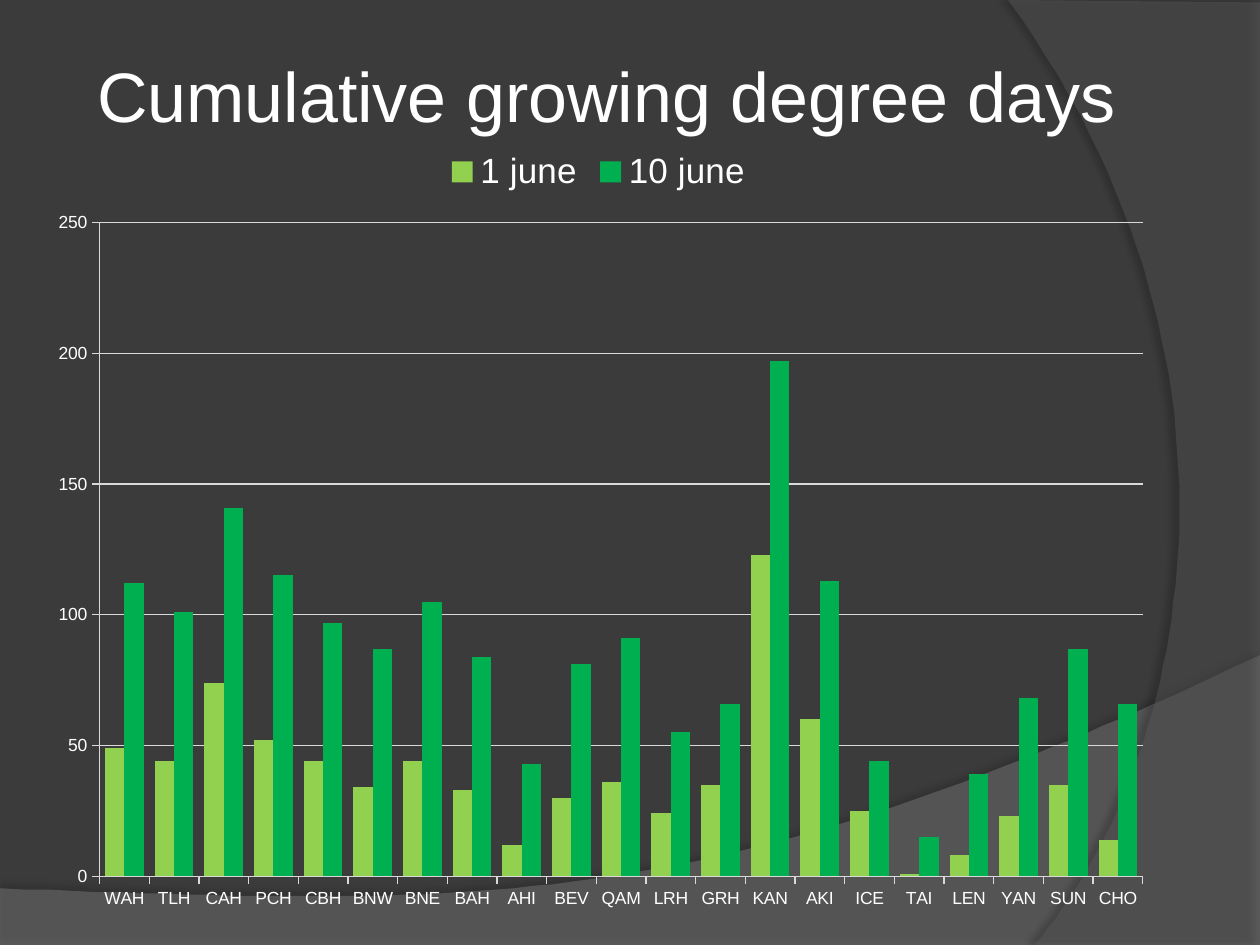
from typing import NamedTuple

from lxml.etree import SubElement
from pptx import Presentation
from pptx.chart.data import CategoryChartData as ChartData
from pptx.dml.color import RGBColor
from pptx.enum.chart import XL_CHART_TYPE as Kind, XL_LEGEND_POSITION as Side, XL_TICK_MARK as Tick
from pptx.enum.text import MSO_ANCHOR as Anchor, PP_ALIGN as Align
from pptx.oxml.ns import qn
from pptx.util import Pt

PX = 9144
FONT = "Arial"
WHITE = RGBColor(0xFF, 0xFF, 0xFF)
BLACK = RGBColor(0, 0, 0)
BACK = RGBColor(0x3B, 0x3B, 0x3B)
SWELL = RGBColor(0x7F, 0x7F, 0x7F)
ARC = RGBColor(0x5E, 0x5E, 0x5E)
LINE = RGBColor(0xD9, 0xD9, 0xD9)
LIME = RGBColor(0x92, 0xD0, 0x50)
GREEN = RGBColor(0x00, 0xB0, 0x50)
STEPS = 60

Point = tuple[float, float]


class Wave(NamedTuple):
    curve: tuple[Point, Point, Point, Point]
    rest: list[Point]
    color: RGBColor
    alpha: int
    shade: int
    dist: float
    angle: int


class Series(NamedTuple):
    name: str
    color: RGBColor
    vals: list[int]


WAVES = [
    Wave(((1000, 520), (559, 729), (391, 719), (0, 705)),
         [(0, 751), (1000, 751)], SWELL, 45, 35, 3.5, 270),
    Wave(((821, 750), (935, 619), (1018, 300), (800, 0)),
         [(1000, 2), (1000, 750)], ARC, 40, 45, 4, 180),
]
SITES = ("WAH TLH CAH PCH CBH BNW BNE BAH AHI BEV QAM "
         "LRH GRH KAN AKI ICE TAI LEN YAN SUN CHO").split()
SERIES = [
    Series("1 june", LIME, [49, 44, 74, 52, 44, 34, 44, 33, 12, 30, 36,
                            24, 35, 123, 60, 25, 1, 8, 23, 35, 14]),
    Series("10 june", GREEN, [112, 101, 141, 115, 97, 87, 105, 84, 43, 81, 91,
                              55, 66, 197, 113, 44, 15, 39, 68, 87, 66]),
]


def apply(obj, form: dict) -> None:
    for key, val in form.items():
        setattr(obj, key, val)


def box(x: int, y: int, w: int, h: int) -> dict:
    return {"left": x * PX, "top": y * PX, "width": w * PX, "height": h * PX}


def style(font, size: int) -> None:
    apply(font, {"name": FONT, "size": Pt(size), "bold": False})
    font.color.rgb = WHITE


def stroke(line) -> None:
    line.width = Pt(0.75)
    line.color.rgb = LINE


def bend(curve: tuple[Point, Point, Point, Point], t: float) -> Point:
    u = 1 - t
    parts = (u ** 3, 3 * u * u * t, 3 * u * t * t, t ** 3)
    return tuple(sum(k * p[i] for k, p in zip(parts, curve)) for i in (0, 1))


def fade(node, alpha: int) -> None:
    SubElement(node, qn("a:alpha"), val=str(alpha * 1000))


def draw_wave(slide, wave: Wave) -> None:
    start, *dots = [bend(wave.curve, n / STEPS) for n in range(STEPS + 1)]
    path = slide.shapes.build_freeform(*start, scale=PX)
    path.add_line_segments(dots + wave.rest)
    shape = path.convert_to_shape()
    shape.line.fill.background()
    shape.fill.solid()
    shape.fill.fore_color.rgb = wave.color
    props = shape.element.spPr
    fade(props.find(qn("a:solidFill"))[0], wave.alpha)
    glow = SubElement(SubElement(props, qn("a:effectLst")), qn("a:outerShdw"),
                      blurRad=str(Pt(4)), dist=str(Pt(wave.dist)),
                      dir=str(wave.angle * 60000), rotWithShape="0")
    fade(SubElement(glow, qn("a:srgbClr"), val=str(BLACK)), wave.shade)


def draw_title(slide, text: str) -> None:
    title = slide.shapes.title
    apply(title, box(67, 33, 867, 77))
    frame = title.text_frame
    apply(frame, {"text": text, "word_wrap": True, "vertical_anchor": Anchor.BOTTOM,
                  "margin_bottom": 2 * PX})
    para = frame.paragraphs[0]
    para.alignment = Align.LEFT
    style(para.runs[0].font, 40)
    slide.shapes.element.append(title.element)


def place_plot(chart) -> None:
    area = chart.element.find(".//" + qn("c:plotArea"))
    for old in area.findall(qn("c:layout")):
        area.remove(old)
    layout = SubElement(area, qn("c:layout"))
    area.insert(0, layout)
    manual = SubElement(layout, qn("c:manualLayout"))
    spots = {"layoutTarget": "inner", "xMode": "edge", "yMode": "edge",
             "x": "0.06", "y": "0.11", "w": "0.92", "h": "0.83"}
    for key, val in spots.items():
        SubElement(manual, qn("c:" + key), val=val)


def draw_chart(slide) -> None:
    data = ChartData()
    data.categories = SITES
    for item in SERIES:
        data.add_series(item.name, item.vals)
    spot = box(25, 108, 900, 625)
    chart = slide.shapes.add_chart(Kind.COLUMN_CLUSTERED, *spot.values(), data).chart
    apply(chart, {"has_title": False, "has_legend": True})
    style(chart.font, 10)
    apply(chart.legend, {"position": Side.TOP, "include_in_layout": False})
    style(chart.legend.font, 20)
    plot = chart.plots[0]
    apply(plot, {"gap_width": 57, "overlap": 0, "vary_by_categories": False})
    for bars, item in zip(plot.series, SERIES):
        bars.format.fill.solid()
        bars.format.fill.fore_color.rgb = item.color
        bars.invert_if_negative = False
    axes = chart.category_axis, chart.value_axis
    for axis in axes:
        apply(axis, {"major_tick_mark": Tick.OUTSIDE, "minor_tick_mark": Tick.NONE})
        stroke(axis.format.line)
        style(axis.tick_labels.font, 10)
    apply(axes[1], {"minimum_scale": 0, "maximum_scale": 250, "major_unit": 50,
                    "has_major_gridlines": True})
    stroke(axes[1].major_gridlines.format.line)
    place_plot(chart)


def main() -> None:
    deck = Presentation()
    apply(deck, {"slide_width": 1000 * PX, "slide_height": 750 * PX})
    slide = deck.slides.add_slide(deck.slide_layouts[5])
    slide.background.fill.solid()
    slide.background.fill.fore_color.rgb = BACK
    for wave in WAVES:
        draw_wave(slide, wave)
    draw_title(slide, "Cumulative growing degree days")
    draw_chart(slide)
    deck.save("out.pptx")


if __name__ == "__main__":
    main()
